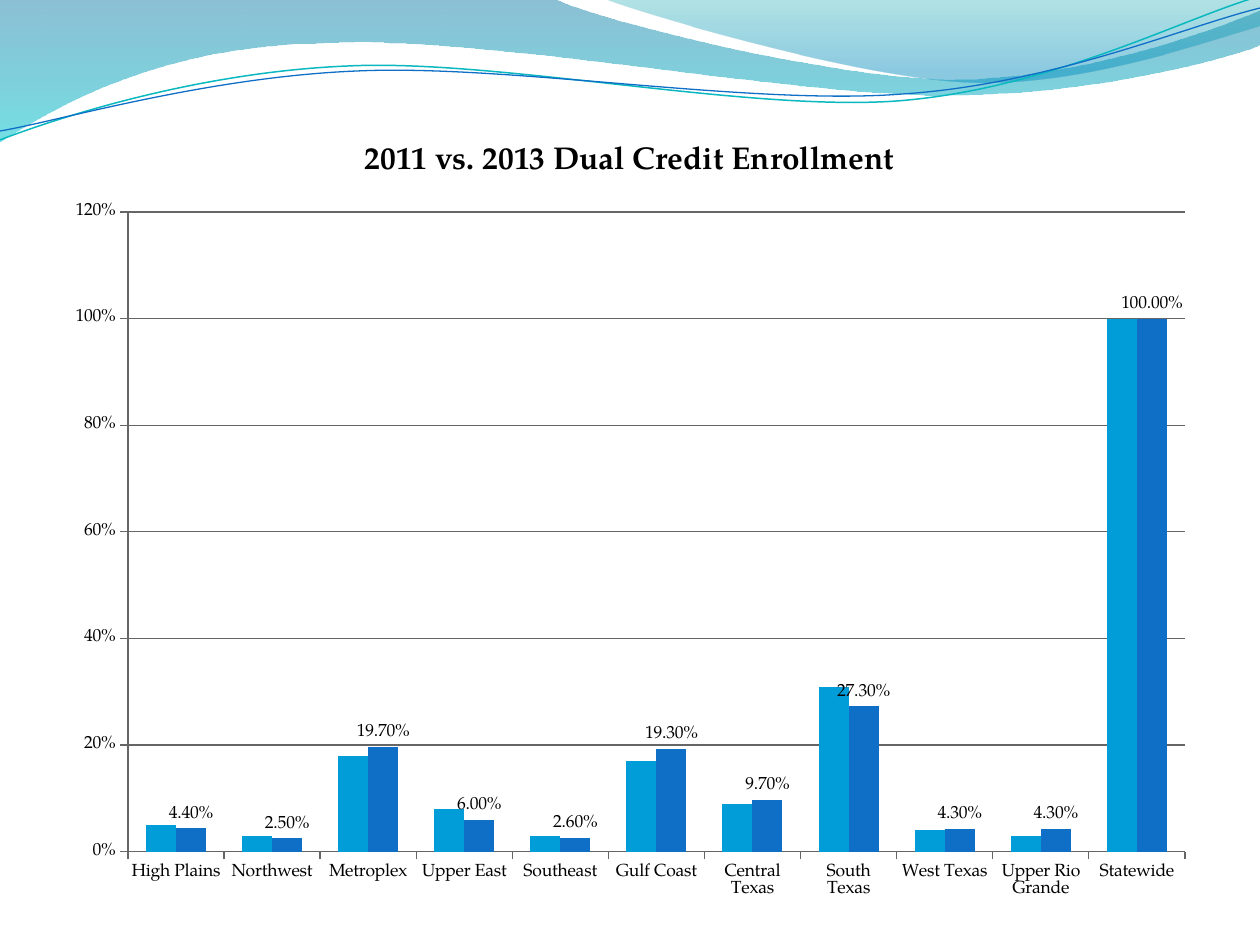
import math

import pptx
import pptx.chart.data
import pptx.dml.color
import pptx.enum.chart
import pptx.oxml
import pptx.oxml.ns
import pptx.util
from lxml import etree

SCALE = 914400 / 126
FONT = "TeX Gyre Pagella"
AXIS_GRAY = "666666"
TITLE = "2011 vs. 2013 Dual Credit Enrollment"

ENROLLMENT = [
    ("High Plains", 0.05, 0.044),
    ("Northwest", 0.03, 0.025),
    ("Metroplex", 0.18, 0.197),
    ("Upper East", 0.08, 0.06),
    ("Southeast", 0.03, 0.026),
    ("Gulf Coast", 0.17, 0.193),
    ("Central Texas", 0.09, 0.097),
    ("South Texas", 0.31, 0.273),
    ("West Texas", 0.04, 0.043),
    ("Upper Rio Grande", 0.03, 0.043),
    ("Statewide", 1, 1),
]
SERIES = [("Series 1", "009DD9"), ("Series 2", "0F6FC6")]

WAVES = [
    {
        "start": (0, 0),
        "segments": [
            [(554, -1)],
            [(600, 21), (837, 79), (955, 79)],
            [(1075, 79), (1207, 33), (1260, 11)],
            [(1261, 45)],
            [(1239, 55), (1096, 96), (940, 95)],
            [(784, 95), (481, 35), (324, 43)],
            [(163, 45), (58, 105), (-1, 142)],
        ],
        "stops": [(0, "0074A1", 45), (1, "00C6CF", 55)],
    },
    {
        "start": (604, -1),
        "segments": [
            [(641, 14), (859, 78), (969, 82)],
            [(1079, 87), (1211, 40), (1260, 26)],
            [(1260, 0)],
        ],
        "stops": [(0, "00A1A9", 30), (0.8, "008BBF", 45)],
    },
    {
        "start": (0, 140),
        "segments": [
            [(60, 117), (199, 72), (349, 66)],
            [(498, 59), (747, 112), (898, 101)],
            [(1050, 89), (1182, 19), (1257, -3)],
        ],
        "line": ("0AB8BF", 0.85),
        "pivot": (629, 72),
    },
    {
        "start": (0, 131),
        "segments": [
            [(59, 121), (207, 77), (357, 71)],
            [(508, 64), (752, 106), (903, 94)],
            [(1053, 84), (1186, 26), (1260, 8)],
        ],
        "line": ("0F6FC6", 0.75),
        "pivot": (629, 74),
    },
]
TILT = 357.3

CHART_BOX = (53, 116, 1155, 798)
PLOT_BOX = (128, 212, 1057, 640)
TITLE_CORNER = (359, 138)


def px(length):
    return pptx.util.Emu(round(length * SCALE))


def color(value):
    return pptx.dml.color.RGBColor.from_string(value)


def set_line(line, value, width):
    line.color.rgb = color(value)
    line.width = pptx.util.Pt(width)


def set_font(font, size=10, bold=False):
    font.name = FONT
    font.size = pptx.util.Pt(size)
    font.bold = bold
    font.color.rgb = color("000000")


def write_text(text_frame, text, **font_format):
    run = text_frame.paragraphs[0].add_run()
    run.text = text
    set_font(run.font, **font_format)


def level(point, pivot):
    angle = math.radians(-TILT)
    x, y = point[0] - pivot[0], point[1] - pivot[1]
    return (
        pivot[0] + x * math.cos(angle) - y * math.sin(angle),
        pivot[1] + x * math.sin(angle) + y * math.cos(angle),
    )


def bend(shape, segments):
    sides = iter(list(shape.element.spPr.iter(pptx.oxml.ns.qn("a:lnTo"))))
    for segment in segments:
        corners = [next(sides) for _ in segment]
        if len(corners) == 3:
            curve = etree.Element(pptx.oxml.ns.qn("a:cubicBezTo"))
            corners[0].addprevious(curve)
            for corner in corners:
                curve.append(corner[0])
                corner.getparent().remove(corner)


def add_wave(slide, start, segments, stops=None, line=None, pivot=None):
    points = [start] + [point for segment in segments for point in segment]
    if pivot:
        points = [level(point, pivot) for point in points]
    points = [(px(x), px(y)) for x, y in points]
    builder = slide.shapes.build_freeform(*points[0])
    builder.add_line_segments(points[1:], close=stops is not None)
    shape = builder.convert_to_shape()
    bend(shape, segments)
    shape.shadow.inherit = False
    if line:
        shape.rotation = TILT
        shape.fill.background()
        set_line(shape.line, *line)
        return
    shape.line.fill.background()
    shape.fill.gradient()
    shape.fill.gradient_angle = 270
    for stop, (position, value, _) in zip(shape.fill.gradient_stops, stops):
        stop.position = position
        stop.color.rgb = color(value)
    tag = pptx.oxml.ns.qn("a:srgbClr")
    for element, (_, _, opacity) in zip(shape.element.spPr.iter(tag), stops):
        etree.SubElement(element, pptx.oxml.ns.qn("a:alpha"), val=str(opacity * 1000))


def place(parent, index, box, inner=False):
    for old in parent.findall(pptx.oxml.ns.qn("c:layout")):
        parent.remove(old)
    layout = etree.Element(pptx.oxml.ns.qn("c:layout"))
    manual = etree.SubElement(layout, pptx.oxml.ns.qn("c:manualLayout"))
    left, top, width, height = CHART_BOX
    values = [("layoutTarget", "inner")] if inner else []
    values += [("xMode", "edge"), ("yMode", "edge")]
    fractions = [(box[0] - left) / width, (box[1] - top) / height]
    fractions += [size / full for size, full in zip(box[2:], (width, height))]
    values += [(name, f"{fraction:.4f}") for name, fraction in zip("xywh", fractions)]
    for name, value in values:
        etree.SubElement(manual, pptx.oxml.ns.qn(f"c:{name}"), val=value)
    parent.insert(index, layout)


def add_enrollment_chart(slide):
    data = pptx.chart.data.CategoryChartData(number_format="0.00%")
    names, *columns = zip(*ENROLLMENT)
    data.categories = names
    for (name, _), values in zip(SERIES, columns):
        data.add_series(name, values)
    kind = pptx.enum.chart.XL_CHART_TYPE.COLUMN_CLUSTERED
    chart = slide.shapes.add_chart(kind, *map(px, CHART_BOX), data).chart
    set_font(chart.font)
    chart.has_legend = False
    chart.has_title = True
    title = chart.chart_title
    write_text(title.text_frame, TITLE, size=18, bold=True)
    place(title._element, 1, TITLE_CORNER)

    plot = chart.plots[0]
    plot.gap_width = 120
    plot.overlap = 0
    plot.vary_by_categories = False
    place(plot._element.getparent(), 0, PLOT_BOX, inner=True)
    for series, (_, value) in zip(plot.series, SERIES):
        series.format.fill.solid()
        series.format.fill.fore_color.rgb = color(value)
    labels = plot.series[1].data_labels
    labels.show_value = True
    labels.number_format = "0.00%"
    labels.number_format_is_linked = False
    labels.position = pptx.enum.chart.XL_LABEL_POSITION.OUTSIDE_END
    set_font(labels.font)

    for axis in (chart.category_axis, chart.value_axis):
        axis.major_tick_mark = pptx.enum.chart.XL_TICK_MARK.OUTSIDE
        set_line(axis.format.line, AXIS_GRAY, 0.75)
        set_font(axis.tick_labels.font)
    value_axis = chart.value_axis
    value_axis.minimum_scale, value_axis.maximum_scale, value_axis.major_unit = 0, 1.2, 0.2
    value_axis.tick_labels.number_format = "0%"
    value_axis.tick_labels.number_format_is_linked = False
    set_line(value_axis.major_gridlines.format.line, AXIS_GRAY, 0.75)


presentation = pptx.Presentation()
presentation.slide_width, presentation.slide_height = px(1260), px(945)
slide = presentation.slides.add_slide(presentation.slide_layouts[6])
for wave in WAVES:
    add_wave(slide, **wave)
add_enrollment_chart(slide)
presentation.save("out.pptx")
